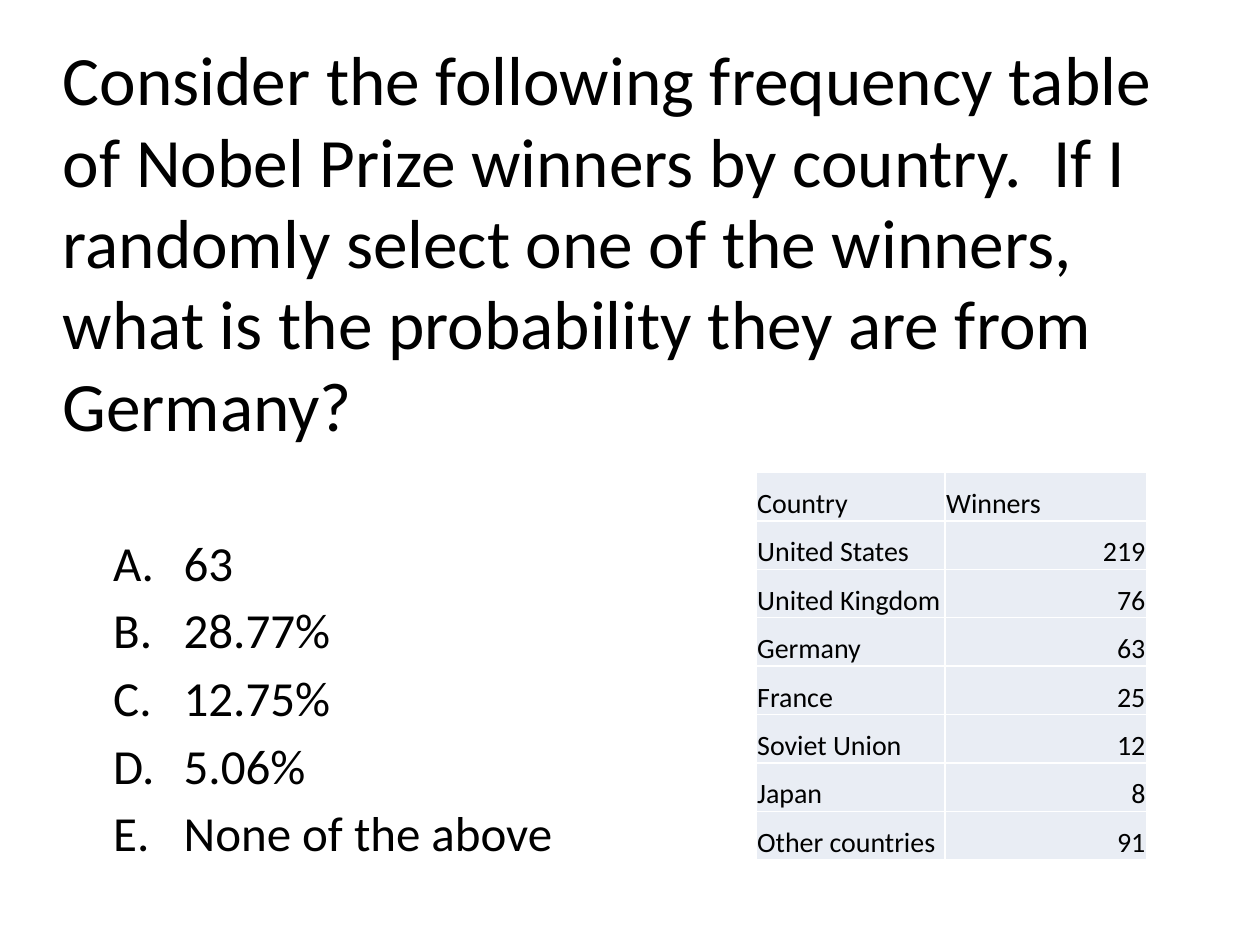
import dataclasses

import lxml.etree
import pptx
import pptx.dml.color
import pptx.enum.text
import pptx.oxml.ns
import pptx.util

Inches, Pt = pptx.util.Inches, pptx.util.Pt
RGB = pptx.dml.color.RGBColor.from_string
ANCHOR, ALIGN = pptx.enum.text.MSO_ANCHOR, pptx.enum.text.PP_ALIGN
qn = pptx.oxml.ns.qn

QUESTION = ("Consider the following frequency table of Nobel Prize winners by country.  "
            "If I randomly select one of the winners, what is the probability they are from Germany?")
ANSWERS = ["63", "28.77%", "12.75%", "5.06%", "None of the above"]
WINNERS = [
    ("Country", "Winners"),
    ("United States", 219),
    ("United Kingdom", 76),
    ("Germany", 63),
    ("France", 25),
    ("Soviet Union", 12),
    ("Japan", 8),
    ("Other countries", 91),
]


@dataclasses.dataclass(frozen=True)
class Theme:
    font: str = "Calibri"
    ink: str = "000000"
    cell: str = "E9EDF4"
    rule: str = "FFFFFF"
    question_size: float = 39.6
    answer_size: float = 28
    table_size: float = 16


def apply(target, formats):
    for name, value in formats.items():
        setattr(target, name, value)


class QuizSlide:
    def __init__(self, deck, theme):
        self.theme = theme
        self.width, self.height = deck.slide_width, deck.slide_height
        self.slide = deck.slides.add_slide(deck.slide_layouts[6])

    def area(self, left, top, width, height):
        return (round(left * self.width), round(top * self.height),
                round(width * self.width), round(height * self.height))

    def wording(self, paragraph, text, size, **formats):
        apply(paragraph, formats)
        run = paragraph.add_run()
        run.text = str(text)
        apply(run.font, {"name": self.theme.font, "size": Pt(size)})
        run.font.color.rgb = RGB(self.theme.ink)

    def frame(self, area, **formats):
        frame = self.slide.shapes.add_textbox(*self.area(*area)).text_frame
        apply(frame, {"word_wrap": True, **formats})
        return frame

    def question(self, text, area):
        frame = self.frame(area, vertical_anchor=ANCHOR.MIDDLE, margin_bottom=Inches(0.6))
        self.wording(frame.paragraphs[0], text, self.theme.question_size, line_spacing=0.98)

    def answers(self, choices, area):
        frame = self.frame(area, margin_top=Inches(0.55))
        for index, choice in enumerate(choices):
            paragraph = frame.add_paragraph() if index else frame.paragraphs[0]
            self.wording(paragraph, choice, self.theme.answer_size, space_before=Pt(5))
            properties = paragraph._p.get_or_add_pPr()
            properties.set("marL", str(Inches(1.06)))
            properties.set("indent", str(Inches(-0.56)))
            lxml.etree.SubElement(properties, qn("a:buFont"), typeface="+mj-lt")
            lxml.etree.SubElement(properties, qn("a:buAutoNum"), type="alphaUcPeriod")

    def border(self, cell):
        properties = cell._tc.get_or_add_tcPr()
        for position, side in enumerate(("a:lnL", "a:lnR", "a:lnT", "a:lnB")):
            line = lxml.etree.Element(qn(side), w=str(Pt(1)))
            fill = lxml.etree.SubElement(line, qn("a:solidFill"))
            lxml.etree.SubElement(fill, qn("a:srgbClr"), val=self.theme.rule)
            properties.insert(position, line)

    def frequency_table(self, rows, area, shares):
        table = self.slide.shapes.add_table(len(rows), len(shares), *self.area(*area)).table
        apply(table, {"first_row": False, "horz_banding": False})
        for column, share in zip(table.columns, shares):
            column.width = round(share * self.width)
        margin = Inches(0.01)
        for r, row in enumerate(rows):
            for c, value in enumerate(row):
                cell = table.cell(r, c)
                apply(cell, {"vertical_anchor": ANCHOR.BOTTOM, "margin_left": margin,
                             "margin_right": margin, "margin_top": margin, "margin_bottom": 0})
                cell.fill.solid()
                cell.fill.fore_color.rgb = RGB(self.theme.cell)
                self.border(cell)
                side = ALIGN.RIGHT if isinstance(value, int) else ALIGN.LEFT
                self.wording(cell.text_frame.paragraphs[0], value, self.theme.table_size,
                             alignment=side)


def main():
    deck = pptx.Presentation()
    apply(deck, {"slide_width": Inches(10), "slide_height": Inches(7.5)})
    quiz = QuizSlide(deck, Theme())
    quiz.question(QUESTION, (0.04, 0.14, 0.91, 0.31))
    quiz.answers(ANSWERS, (0.03, 0.49, 0.87, 0.51))
    quiz.frequency_table(WINNERS, (0.6, 0.5, 0.31, 0.41), (0.15, 0.16))
    deck.save("out.pptx")


if __name__ == "__main__":
    main()
